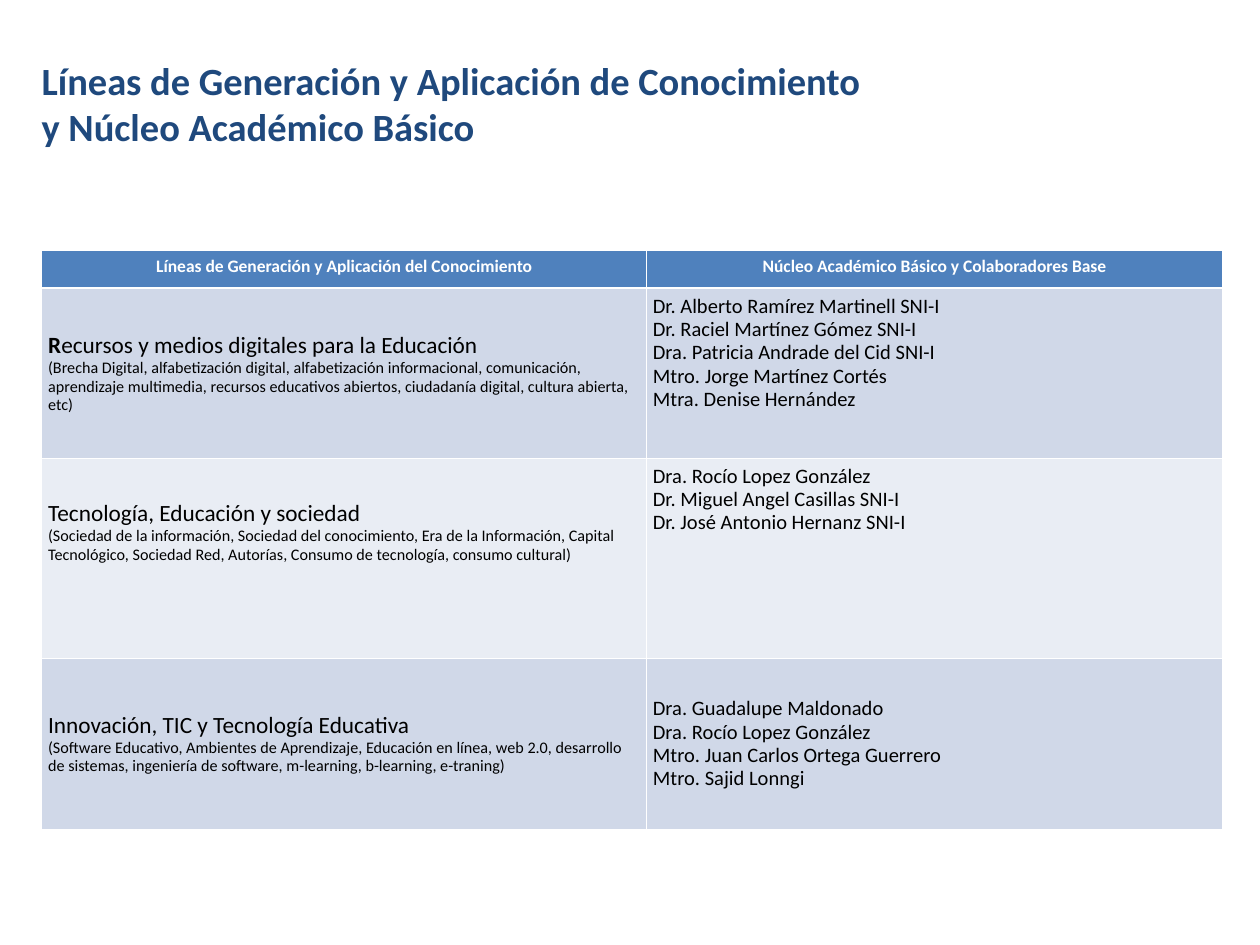
import pptx
import pptx.dml.color
import pptx.enum.text
import pptx.oxml
import pptx.oxml.ns
import pptx.util

Cm, Pt = pptx.util.Cm, pptx.util.Pt
ALIGN, ANCHOR = pptx.enum.text.PP_ALIGN, pptx.enum.text.MSO_ANCHOR
HEX = {"navy": "1F497D", "head": "4F81BD", "dark": "D0D8E8",
       "light": "E9EDF4", "white": "FFFFFF", "black": "000000"}
HEADS = ["Líneas de Generación y Aplicación del Conocimiento",
         "Núcleo Académico Básico y Colaboradores Base"]
LINES = [
    ("Recursos y medios digitales para la Educación",
     "(Brecha Digital, alfabetización digital, alfabetización informacional, comunicación, "
     "aprendizaje multimedia, recursos educativos abiertos, ciudadanía digital, "
     "cultura abierta, etc)",
     ["Dr. Alberto Ramírez Martinell SNI-I", "Dr. Raciel Martínez Gómez SNI-I",
      "Dra. Patricia Andrade del Cid SNI-I", "Mtro. Jorge Martínez Cortés",
      "Mtra. Denise Hernández"]),
    ("Tecnología, Educación y sociedad",
     "(Sociedad de la información, Sociedad del conocimiento, Era de la Información, "
     "Capital Tecnológico, Sociedad Red, Autorías, Consumo de tecnología, consumo cultural)",
     ["Dra. Rocío Lopez González", "Dr. Miguel Angel Casillas SNI-I",
      "Dr. José Antonio Hernanz SNI-I"]),
    ("Innovación, TIC y Tecnología Educativa",
     "(Software Educativo, Ambientes de Aprendizaje, Educación en línea, web 2.0, "
     "desarrollo de sistemas, ingeniería de software, m-learning, b-learning, e-traning)",
     ["Dra. Guadalupe Maldonado", "Dra. Rocío Lopez González",
      "Mtro. Juan Carlos Ortega Guerrero", "Mtro. Sajid Lonngi"]),
]


def style(par, size, tint="black", bold=False):
    par.font.name = "Calibri"
    par.font.size = Pt(size)
    par.font.bold = bold
    par.font.color.rgb = pptx.dml.color.RGBColor.from_string(HEX[tint])


def fill(cell, tint, top, base, texts, sizes, ink="black", bold=False):
    """Give a cell its borders (top and base in points), colour and paragraphs."""
    props = cell._tc.get_or_add_tcPr()
    for side, width in zip("LRTB", (0.45, 0.45, top, base)):
        props.append(pptx.oxml.parse_xml(
            f'<a:ln{side} {pptx.oxml.ns.nsdecls("a")} w="{int(Pt(width))}"><a:solidFill>'
            f'<a:srgbClr val="{HEX["white"]}"/></a:solidFill></a:ln{side}>'))
    cell.fill.solid()
    cell.fill.fore_color.rgb = pptx.dml.color.RGBColor.from_string(HEX[tint])
    cell.margin_left = cell.margin_right = Cm(0.13)
    cell.margin_top = cell.margin_bottom = Cm(0.13)
    cell.text = "\n".join(texts)
    for par, size in zip(cell.text_frame.paragraphs, sizes):
        par.line_spacing = 0.93
        style(par, size, ink, bold)


deck = pptx.Presentation()
deck.slide_width, deck.slide_height = Cm(25.4), Cm(19.05)
slide = deck.slides.add_slide(deck.slide_layouts[6])

# Title
title = slide.shapes.add_textbox(Cm(0.71), Cm(1.02), Cm(20.19), Cm(2.08)).text_frame
title.word_wrap = True
title.margin_left = title.margin_right = Cm(0.13)
title.margin_top = title.margin_bottom = Cm(0.13)
title.text = "Líneas de Generación y Aplicación de Conocimiento\vy Núcleo Académico Básico"
style(title.paragraphs[0], 22, "navy", True)

# Table
wide, high = [12.19, 11.61], [0.76, 3.43, 4.04, 3.43]
grid = slide.shapes.add_table(len(high), len(wide), Cm(0.84), Cm(5.05),
                              Cm(sum(wide)), Cm(sum(high))).table
for col, width in zip(grid.columns, wide):
    col.width = Cm(width)
for row, height in zip(grid.rows, high):
    row.height = Cm(height)

for col, head in enumerate(HEADS):
    cell = grid.cell(0, col)
    fill(cell, "head", 0.45, 1.47, [head], [10], "white", True)
    cell.text_frame.paragraphs[0].alignment = ALIGN.CENTER

for row, (name, detail, staff) in enumerate(LINES, 1):
    tint = "dark" if row % 2 else "light"
    top = 1.47 if row == 1 else 0.45
    left, right = grid.cell(row, 0), grid.cell(row, 1)
    fill(left, tint, top, 0.45, [name, detail], [13.3, 9.2])
    fill(right, tint, top, 0.45, staff, [11.7] * len(staff))
    left.vertical_anchor = ANCHOR.MIDDLE
    right.vertical_anchor = ANCHOR.MIDDLE if row == 3 else ANCHOR.TOP

# Bold initial of the first line; raised text in the second
first = grid.cell(1, 0).text_frame.paragraphs[0]
first.runs[0].text = LINES[0][0][0]
first.runs[0].font.bold = True
first.add_run().text = LINES[0][0][1:]
grid.cell(2, 0).margin_bottom = Cm(1.2)

deck.save("out.pptx")
